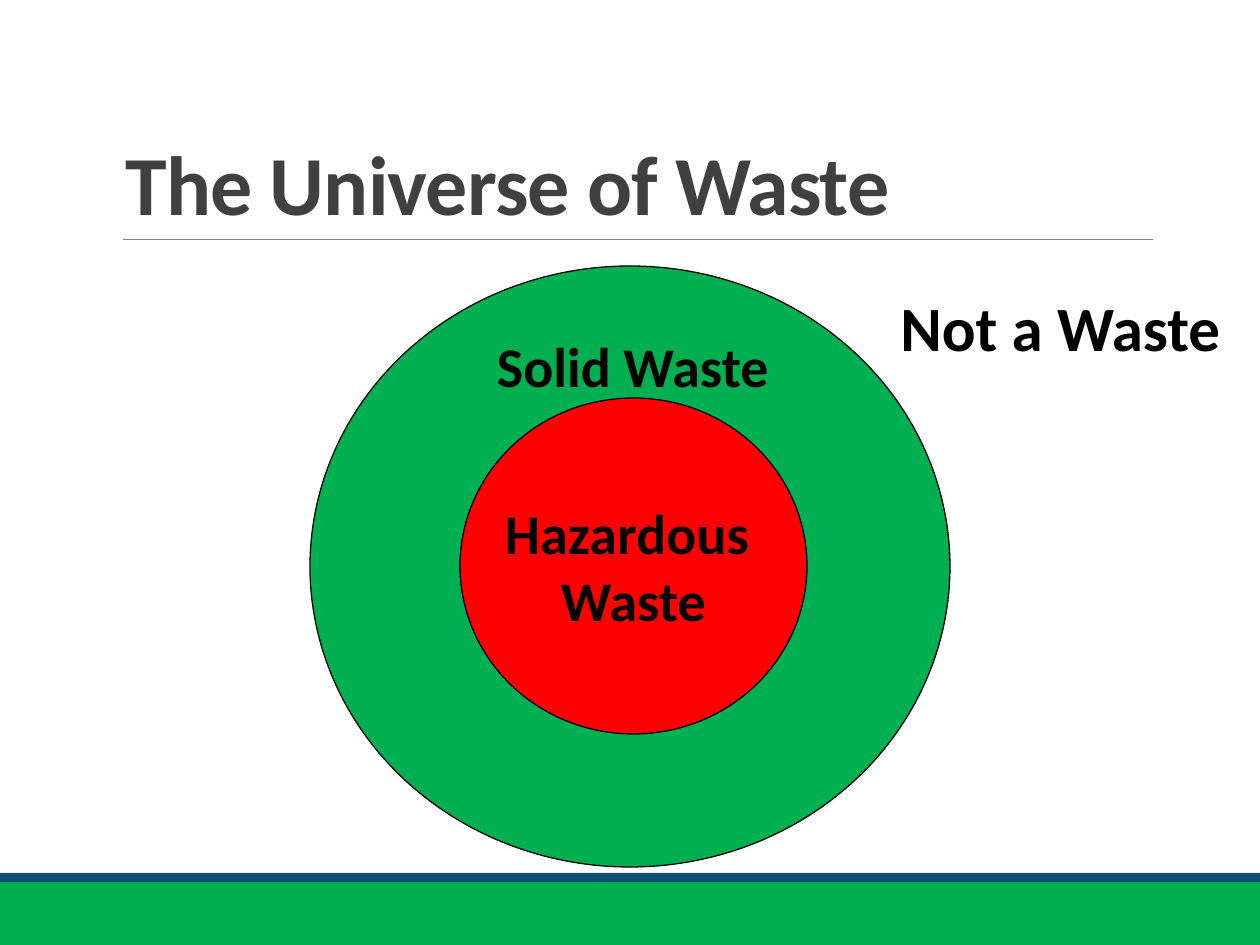
from dataclasses import dataclass

from lxml.etree import SubElement
from pptx import Presentation
from pptx.dml.color import RGBColor
from pptx.enum.shapes import MSO_CONNECTOR, MSO_SHAPE
from pptx.enum.text import MSO_ANCHOR, MSO_AUTO_SIZE, PP_ALIGN
from pptx.oxml.ns import qn
from pptx.util import Emu, Pt

PX = 914400 // 126


@dataclass(frozen=True)
class Theme:
    font: str = "Calibri"
    green: str = "00B050"
    navy: str = "0F4C76"
    red: str = "FF0000"
    ink: str = "000000"
    gray: str = "404040"
    rule: str = "808080"
    title: int = 48
    large: int = 36
    label: int = 32


THEME = Theme()

# Boxes are left, top, width, height in px
TITLE = ("The Universe of Waste", (113, 39, 1040, 200))
RULE = (123, 239, 1153, 239)
BANDS = [
    ((0, 882, 1260, 63), THEME.green),
    ((0, 873, 1260, 9), THEME.navy),
]
SOLID = ((310, 266, 640, 601), THEME.green)
HAZARD = ((460, 398, 347, 336), THEME.red)
CORE = "Hazardous \nWaste"
LABELS = [
    ("Not a Waste", (888, 282, 349, 89), THEME.large, PP_ALIGN.LEFT),
    ("Solid Waste", (483, 325, 300, 81), THEME.label, PP_ALIGN.CENTER),
]


def emu(box):
    return [Emu(n * PX) for n in box]


def color(code):
    return RGBColor.from_string(code)


def write(frame, text, size, align, ink=THEME.ink):
    frame.text = text
    for para in frame.paragraphs:
        para.alignment = align
        for run in para.runs:
            font = run.font
            font.name, font.size, font.bold = THEME.font, Pt(size), True
            font.color.rgb = color(ink)


def add_form(slide, kind, box, fill, edge=None):
    form = slide.shapes.add_shape(kind, *emu(box))
    form.shadow.inherit = False
    form.fill.solid()
    form.fill.fore_color.rgb = color(fill)
    if edge:
        form.line.color.rgb = color(edge)
        form.line.width = Pt(0.75)
    else:
        form.line.fill.background()
    return form


def add_label(slide, text, box, size, align):
    frame = slide.shapes.add_textbox(*emu(box)).text_frame
    frame.word_wrap = False
    frame.auto_size = MSO_AUTO_SIZE.SHAPE_TO_FIT_TEXT
    write(frame, text, size, align)


def add_rule(slide):
    rule = slide.shapes.add_connector(MSO_CONNECTOR.STRAIGHT, *emu(RULE))
    rule.line.color.rgb = color(THEME.rule)
    rule.line.width = Pt(0.5)
    SubElement(rule._element.spPr, qn("a:effectLst"))


def set_title(slide):
    text, box = TITLE
    title = slide.shapes.title
    title.left, title.top, title.width, title.height = emu(box)
    frame = title.text_frame
    frame.word_wrap = True
    frame.auto_size = MSO_AUTO_SIZE.NONE
    frame.vertical_anchor = MSO_ANCHOR.BOTTOM
    write(frame, text, THEME.title, PP_ALIGN.LEFT, THEME.gray)
    para = frame.paragraphs[0]
    para.line_spacing = 0.85
    para.runs[0].font._element.set("spc", "-50")


def main():
    deck = Presentation()
    deck.slide_width, deck.slide_height = emu((1260, 945))
    slide = deck.slides.add_slide(deck.slide_layouts[5])

    for box, fill in BANDS:
        add_form(slide, MSO_SHAPE.RECTANGLE, box, fill)
    add_rule(slide)
    set_title(slide)

    add_form(slide, MSO_SHAPE.OVAL, *SOLID, THEME.ink)
    for label in LABELS:
        add_label(slide, *label)
    core = add_form(slide, MSO_SHAPE.OVAL, *HAZARD, THEME.ink).text_frame
    core.word_wrap = False
    core.vertical_anchor = MSO_ANCHOR.MIDDLE
    write(core, CORE, THEME.label, PP_ALIGN.CENTER)

    deck.save("out.pptx")


if __name__ == "__main__":
    main()
